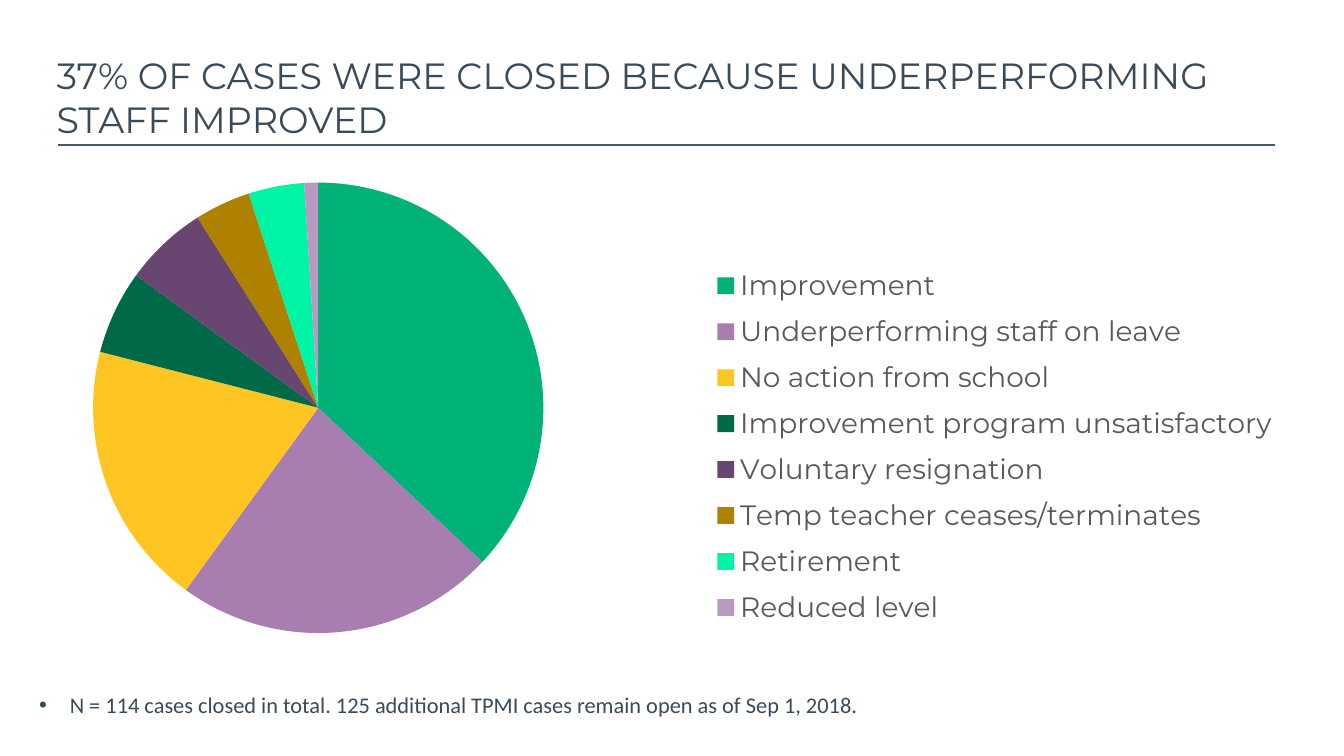
from lxml import etree
from pptx import Presentation
from pptx.chart.data import CategoryChartData
from pptx.dml.color import RGBColor
from pptx.enum.chart import XL_CHART_TYPE, XL_LEGEND_POSITION
from pptx.enum.shapes import MSO_CONNECTOR
from pptx.enum.text import MSO_ANCHOR
from pptx.oxml.ns import qn
from pptx.util import Cm, Pt

PIE = XL_CHART_TYPE.PIE
RIGHT = XL_LEGEND_POSITION.RIGHT
STRAIGHT = MSO_CONNECTOR.STRAIGHT
TOP, MIDDLE = MSO_ANCHOR.TOP, MSO_ANCHOR.MIDDLE

TITLE = "37% OF CASES WERE CLOSED BECAUSE UNDERPERFORMING STAFF IMPROVED"
NOTE = "N = 114 cases closed in total. 125 additional TPMI cases remain open as of Sep 1, 2018."
OUTCOMES = [
    ("Improvement", 37, "00B178"),
    ("Underperforming staff on leave", 23, "A87EB1"),
    ("No action from school", 19, "FFC623"),
    ("Improvement program unsatisfactory", 6, "006A48"),
    ("Voluntary resignation", 6, "694571"),
    ("Temp teacher ceases/terminates", 4, "AE8100"),
    ("Retirement", 4, "00F4A5"),
    ("Reduced level", 1, "B998C1"),
]
THEME = {
    "heading": "Montserrat", "body": "Calibri",
    "ink": "394A59", "rule": "425968", "legend": "595959", "paper": "FFFFFF",
    "title_size": 19.5, "note_size": 12, "legend_size": 15,
}
SLIDE = (25.4, 14.28)
TITLE_BOX = (1.07, 0.91, 23.93, 1.85)
NOTE_BOX = (0.74, 12.93, 24.26, 0.99)
RULE = (1.09, 2.74, 24.1, 2.74)
CHART_BOX = (-1.47, 3.1, 25.98, 9.19)
PIE_BOX = (1.76, 3.45, 8.51, 8.51)
LEGEND_BOX = (13.3, 4.85, 11, 7.18)
BULLET_INDENT = 0.58


def style_font(font, name, size, color):
    font.name, font.size = name, Pt(size)
    font.color.rgb = RGBColor.from_string(color)


def add_text(s, box, text, anchor, name, size):
    tf = s.shapes.add_textbox(*map(Cm, box)).text_frame
    tf.word_wrap = True
    tf.vertical_anchor = anchor
    tf.margin_left = 0
    tf.text = text
    p = tf.paragraphs[0]
    style_font(p.runs[0].font, name, size, THEME["ink"])
    return p


def add_bullet(p, indent):
    pPr = p._p.get_or_add_pPr()
    pPr.set("marL", str(Cm(indent)))
    pPr.set("indent", str(-Cm(indent)))
    etree.SubElement(pPr, qn("a:buFont")).set("typeface", "Arial")
    etree.SubElement(pPr, qn("a:buChar")).set("char", "•")


def place(parent, index, box, inner=False):
    for old in parent.findall(qn("c:layout")):
        parent.remove(old)
    layout = etree.Element(qn("c:layout"))
    manual = etree.SubElement(layout, qn("c:manualLayout"))
    left, top, width, height = CHART_BOX
    x, y, w, h = box
    values = {"layoutTarget": "inner"} if inner else {}
    values |= {"xMode": "edge", "yMode": "edge"}
    values |= {"x": (x - left) / width, "y": (y - top) / height, "w": w / width, "h": h / height}
    for tag, value in values.items():
        etree.SubElement(manual, qn(f"c:{tag}")).set("val", str(value))
    parent.insert(index, layout)


def add_pie(s):
    names, values, colors = zip(*OUTCOMES)
    data = CategoryChartData()
    data.categories = names
    data.add_series("Series 1", values)
    chart = s.shapes.add_chart(PIE, *map(Cm, CHART_BOX), data).chart
    chart.has_title = False
    style_font(chart.font, THEME["heading"], 10, "000000")
    plot = chart.plots[0]
    plot.vary_by_categories = True
    for i, color in enumerate(colors):
        fmt = plot.series[0].points[i].format
        fmt.fill.solid()
        fmt.fill.fore_color.rgb = RGBColor.from_string(color)
        fmt.line.fill.background()
    chart.has_legend = True
    legend = chart.legend
    legend.position = RIGHT
    legend.include_in_layout = False
    style_font(legend.font, THEME["heading"], THEME["legend_size"], THEME["legend"])
    place(chart._chartSpace.chart.plotArea, 0, PIE_BOX, inner=True)
    place(legend._element, 1, LEGEND_BOX)


def main():
    """Build the slide on why underperformance cases were closed."""
    prs = Presentation()
    prs.slide_width, prs.slide_height = map(Cm, SLIDE)
    s = prs.slides.add_slide(prs.slide_layouts[6])
    s.background.fill.solid()
    s.background.fill.fore_color.rgb = RGBColor.from_string(THEME["paper"])
    rule = s.shapes.add_connector(STRAIGHT, *map(Cm, RULE))
    rule.line.color.rgb = RGBColor.from_string(THEME["rule"])
    rule.line.width = Pt(1)
    etree.SubElement(rule._element.spPr, qn("a:effectLst"))
    add_pie(s)
    note = add_text(s, NOTE_BOX, NOTE, TOP, THEME["body"], THEME["note_size"])
    add_bullet(note, BULLET_INDENT)
    add_text(s, TITLE_BOX, TITLE, MIDDLE, THEME["heading"], THEME["title_size"])
    prs.save("out.pptx")


if __name__ == "__main__":
    main()
